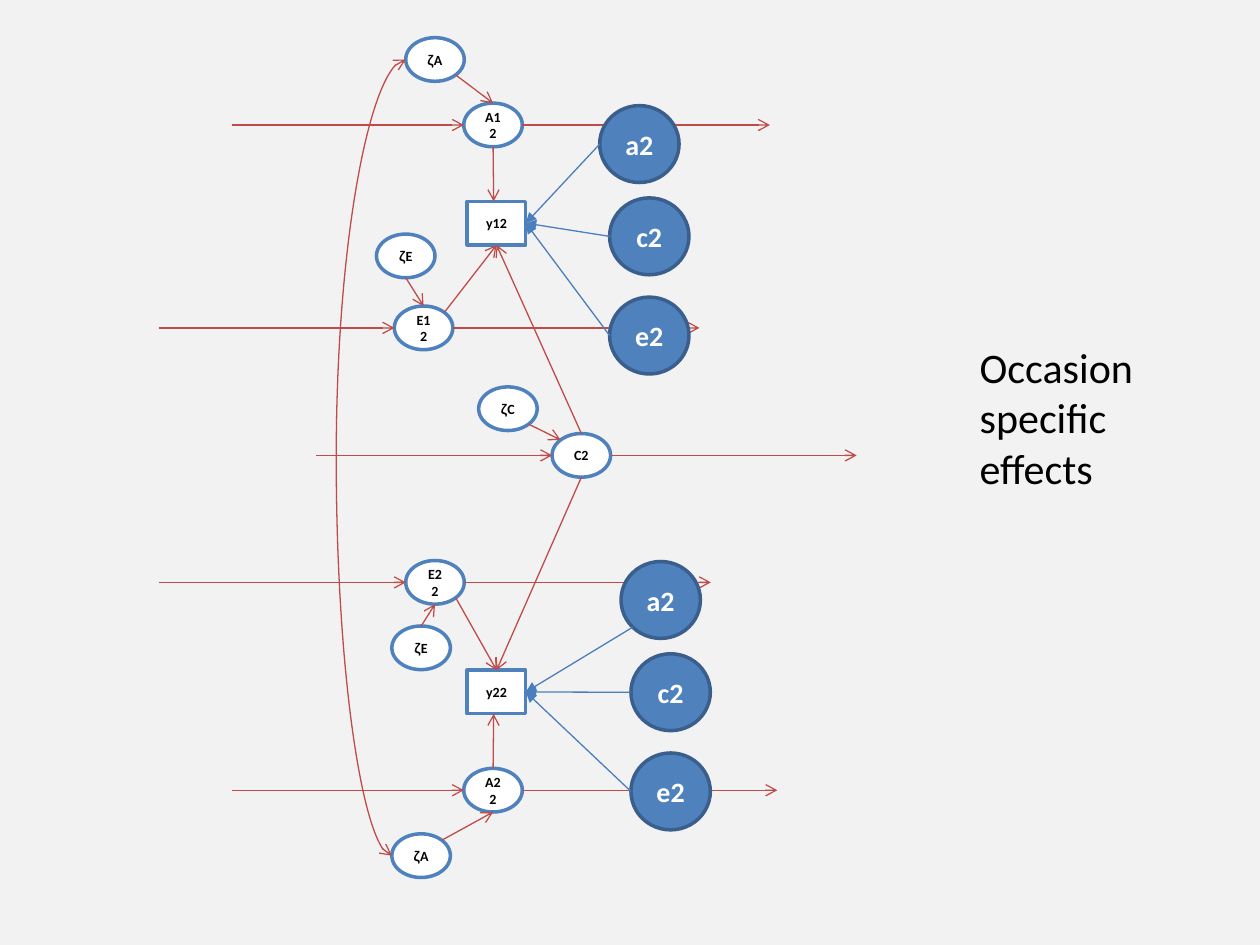
from dataclasses import dataclass
from typing import Optional

import pptx
import pptx.dml.color
import pptx.enum.shapes
import pptx.enum.text
import pptx.oxml
import pptx.oxml.ns
import pptx.util

Cm = pptx.util.Cm
Pt = pptx.util.Pt
MSO_SHAPE = pptx.enum.shapes.MSO_SHAPE
MSO_CONNECTOR = pptx.enum.shapes.MSO_CONNECTOR

RED, BLUE = "BF4C48", "4B7EBC"
TOP, RIGHT, BOTTOM, LEFT = (0, -1), (1, 0), (0, 1), (-1, 0)
DIAGONAL = 0.71
UPPER_LEFT, UPPER_RIGHT = (-DIAGONAL, -DIAGONAL), (DIAGONAL, -DIAGONAL)
LOWER_LEFT, LOWER_RIGHT = (-DIAGONAL, DIAGONAL), (DIAGONAL, DIAGONAL)
RECTANGLE_SITES = {TOP: 0, LEFT: 1, BOTTOM: 2, RIGHT: 3}
Point = tuple[float, float]


@dataclass(frozen=True)
class Style:
    geometry: int
    width: float
    height: float
    fill: str
    line: str
    ink: str
    size: int


LATENT = Style(MSO_SHAPE.OVAL, 1.18, 0.88, "FFFFFF", "4F81BD", "000000", 8)
OBSERVED = Style(MSO_SHAPE.RECTANGLE, 1.18, 0.88, "FFFFFF", "4F81BD", "000000", 8)
OCCASION = Style(MSO_SHAPE.OVAL, 1.6, 1.55, "4F81BD", "3A5F8C", "FFFFFF", 16)


@dataclass(frozen=True)
class Node:
    label: str
    left: float
    top: float
    style: Style = LATENT

    def at(self, side: Point) -> Point:
        half_width, half_height = self.style.width / 2, self.style.height / 2
        return (self.left + half_width * (1 + side[0]),
                self.top + half_height * (1 + side[1]))


@dataclass(frozen=True)
class Effect:
    source: str
    source_side: Point
    target: str
    target_side: Point


@dataclass(frozen=True)
class TimePath:
    start: float
    node: str
    end: float


NODES = {
    "zA1": Node("ζA", 8.18, 0.76),
    "A12": Node("A12", 9.35, 2.08),
    "y12": Node("y12", 9.42, 4.06, OBSERVED),
    "zE1": Node("ζE", 7.59, 4.72),
    "E12": Node("E12", 7.95, 6.17),
    "zC": Node("ζC", 9.65, 7.8),
    "C2": Node("C2", 11.13, 8.74),
    "E22": Node("E22", 8.18, 11.3),
    "zE2": Node("ζE", 7.9, 12.62),
    "y22": Node("y22", 9.42, 13.51, OBSERVED),
    "A22": Node("A22", 9.35, 15.49),
    "zA2": Node("ζA", 7.9, 16.81),
}
EFFECTS = [
    Effect("zA1", LOWER_RIGHT, "A12", TOP),
    Effect("zE1", BOTTOM, "E12", TOP),
    Effect("zC", LOWER_RIGHT, "C2", UPPER_LEFT),
    Effect("zE2", TOP, "E22", BOTTOM),
    Effect("zA2", UPPER_RIGHT, "A22", BOTTOM),
    Effect("A12", BOTTOM, "y12", (-0.1, -1)),
    Effect("A22", TOP, "y22", (-0.1, 1)),
    Effect("E12", UPPER_RIGHT, "y12", BOTTOM),
    Effect("E22", LOWER_RIGHT, "y22", TOP),
    Effect("C2", TOP, "y12", BOTTOM),
    Effect("C2", BOTTOM, "y22", TOP),
]
TIME_PATHS = [
    TimePath(4.67, "A12", 15.52),
    TimePath(3.2, "E12", 14.1),
    TimePath(6.38, "C2", 17.27),
    TimePath(3.2, "E22", 14.33),
    TimePath(4.67, "A22", 15.67),
]
OCCASION_NODES = [
    Node("a2", 12.09, 2.13, OCCASION),
    Node("c2", 12.29, 3.99, OCCASION),
    Node("e2", 12.29, 5.99, OCCASION),
]
OCCASION_GROUPS = [("y12", 0, 0, LEFT), ("y22", 0.43, 9.19, LOWER_LEFT)]


def color(value: str) -> pptx.dml.color.RGBColor:
    return pptx.dml.color.RGBColor.from_string(value)


def format_run(run, size: int, ink: str, bold: bool) -> None:
    run.font.name = "Arial" if run.text == "ζ" else "Calibri"
    run.font.size = Pt(size)
    run.font.bold = bold
    run.font.color.rgb = color(ink)


def draw_node(shapes, node: Node):
    style = node.style
    shape = shapes.add_shape(style.geometry, Cm(node.left), Cm(node.top),
                             Cm(style.width), Cm(style.height))
    shape.shadow.inherit = False
    shape.fill.solid()
    shape.fill.fore_color.rgb = color(style.fill)
    shape.line.color.rgb = color(style.line)
    shape.line.width = Pt(2)
    frame = shape.text_frame
    frame.word_wrap = True
    frame.vertical_anchor = pptx.enum.text.MSO_ANCHOR.MIDDLE
    label = frame.paragraphs[0]
    label.alignment = pptx.enum.text.PP_ALIGN.CENTER
    if node.label.startswith("ζ"):
        label.text = "ζ"
        label.add_run().text = node.label[1:]
    else:
        label.text = node.label
    for run in label.runs:
        format_run(run, style.size, style.ink, True)
    return shape


def draw_arrow(shapes, start: Point, end: Point, ink: str = RED, tip: str = "arrow",
               kind: int = MSO_CONNECTOR.STRAIGHT, both_ends: bool = False):
    arrow = shapes.add_connector(kind, *(Cm(length) for length in start + end))
    arrow.line.color.rgb = color(ink)
    arrow.line.width = Pt(0.75)
    line = arrow.line._get_or_add_ln()
    for end_tag in (["a:headEnd"] if both_ends else []) + ["a:tailEnd"]:
        pptx.oxml.ns.qn(end_tag)
        line.append(pptx.oxml.parse_xml(
            f'<{end_tag} {pptx.oxml.ns.nsdecls("a")} type="{tip}"/>'))
    arrow._element.spPr.append(
        pptx.oxml.parse_xml(f'<a:effectLst {pptx.oxml.ns.nsdecls("a")}/>'))
    return arrow


def draw_effect(shapes, start: Point, target: Node, side: Point, target_shape,
                ink: str = RED, tip: str = "arrow") -> None:
    arrow = draw_arrow(shapes, start, target.at(side), ink, tip)
    site: Optional[int] = RECTANGLE_SITES.get(side)
    if target.style is OBSERVED and site is not None:
        arrow.end_connect(target_shape, site)


def draw_correlation(shapes, first: Node, second: Node) -> None:
    curve = draw_arrow(shapes, first.at(LEFT), second.at(LEFT),
                       kind=MSO_CONNECTOR.CURVE, both_ends=True)
    geometry = curve._element.spPr.find(pptx.oxml.ns.qn("a:prstGeom"))
    for guides in list(geometry):
        geometry.remove(guides)
    geometry.append(pptx.oxml.parse_xml(
        f'<a:avLst {pptx.oxml.ns.nsdecls("a")}><a:gd name="adj1" fmla="val 500000"/></a:avLst>'))


def main() -> None:
    deck = pptx.Presentation()
    deck.slide_width, deck.slide_height = Cm(25.4), Cm(19.05)
    slide = deck.slides.add_slide(deck.slide_layouts[6])
    slide.background.fill.solid()
    slide.background.fill.fore_color.rgb = color("F2F2F2")
    shapes = slide.shapes

    drawn = {name: draw_node(shapes, node) for name, node in NODES.items()}
    for effect in EFFECTS:
        draw_effect(shapes, NODES[effect.source].at(effect.source_side),
                    NODES[effect.target], effect.target_side, drawn[effect.target])
    for time_path in TIME_PATHS:
        node = NODES[time_path.node]
        middle = node.at(LEFT)[1]
        draw_arrow(shapes, (time_path.start, middle), node.at(LEFT))
        draw_arrow(shapes, node.at(RIGHT), (time_path.end, middle))
    draw_correlation(shapes, NODES["zA1"], NODES["zA2"])

    for target, right_shift, down_shift, first_side in OCCASION_GROUPS:
        for base, side in zip(OCCASION_NODES, (first_side, LEFT, LEFT)):
            node = Node(base.label, base.left + right_shift, base.top + down_shift, OCCASION)
            draw_node(shapes, node)
            draw_effect(shapes, node.at(side), NODES[target], RIGHT, drawn[target],
                        BLUE, "triangle")

    caption = shapes.add_textbox(Cm(19.5), Cm(6.76), Cm(4), Cm(3.33)).text_frame
    caption.word_wrap = True
    caption.text = "Occasion specific effects"
    format_run(caption.paragraphs[0].runs[0], 24, "000000", False)
    deck.save("out.pptx")


if __name__ == "__main__":
    main()
